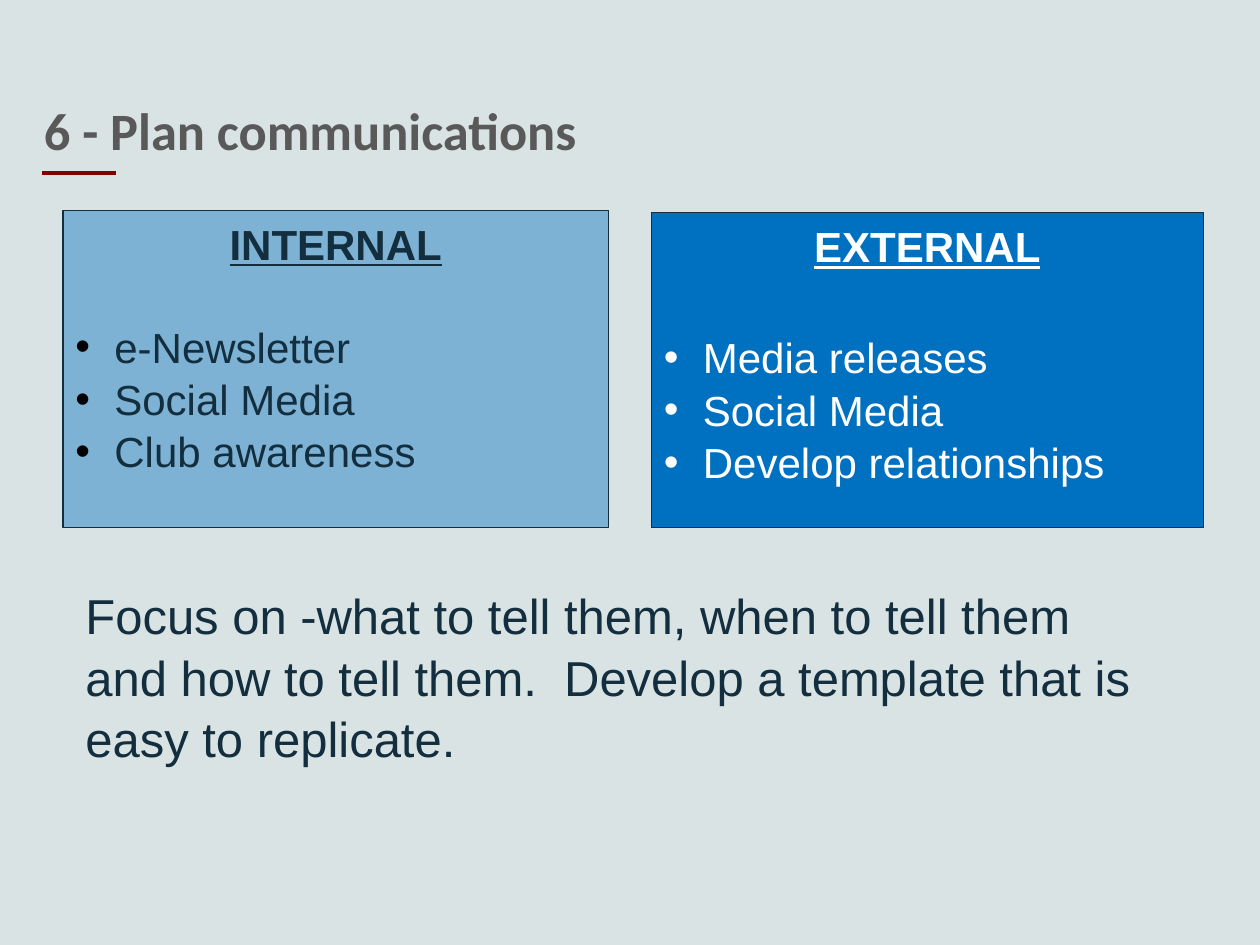
from dataclasses import dataclass

from lxml import etree
from pptx import Presentation, util as u
from pptx.dml.color import RGBColor
from pptx.enum import shapes, text
from pptx.oxml.ns import qn

WIDTH, HEIGHT = u.Inches(10), u.Inches(7.5)
COLOURS = {
    "background": "DAE3E3",
    "title": "595959",
    "accent": "800000",
    "ink": "132E3E",
    "panel": "0070C0",
    "white": "FFFFFF",
    "black": "000000",
}
LINE_SPACING = 1.04


@dataclass(frozen=True)
class Area:
    """A rectangle in shares of the slide's width and height."""
    left: float
    top: float
    width: float
    height: float

    def lengths(self) -> tuple[int, int, int, int]:
        return (int(self.left * WIDTH), int(self.top * HEIGHT),
                int(self.width * WIDTH), int(self.height * HEIGHT))


@dataclass(frozen=True)
class Style:
    size: float
    colour: str
    font: str = "Arial"
    bold: bool = False
    underline: bool = False


@dataclass(frozen=True)
class Panel:
    area: Area
    heading: str
    items: tuple[str, ...]
    ink: str
    bullet: str
    opacity: int
    heading_gap: float


PANELS = (
    Panel(Area(0.05, 0.2225, 0.433, 0.336), "INTERNAL",
          ("e-Newsletter", "Social Media", "Club awareness"),
          "ink", "black", 42, 28.7),
    Panel(Area(0.517, 0.225, 0.438, 0.3335), "EXTERNAL",
          ("Media releases", "Social Media", "Develop relationships"),
          "white", "white", 100, 33.5),
)


def colour(name: str) -> RGBColor:
    return RGBColor.from_string(COLOURS[name])


def add_run(paragraph, words: str, style: Style) -> None:
    run = paragraph.add_run()
    run.text = words
    run.font.name = style.font
    run.font.size = u.Pt(style.size)
    run.font.bold = style.bold
    run.font.underline = style.underline
    run.font.color.rgb = colour(style.colour)


def add_bullet(paragraph, bullet_colour: str) -> None:
    properties = paragraph._p.get_or_add_pPr()
    properties.set("marL", str(u.Inches(0.31)))
    properties.set("indent", str(-u.Inches(0.31)))
    holder = etree.SubElement(properties, qn("a:buClr"))
    etree.SubElement(holder, qn("a:srgbClr"), val=COLOURS[bullet_colour])
    etree.SubElement(properties, qn("a:buFont"), typeface="Arial")
    etree.SubElement(properties, qn("a:buChar"), char="•")


def add_text(slide, area: Area, words: str, style: Style,
             anchor=text.MSO_ANCHOR.TOP, spacing: float = LINE_SPACING) -> None:
    frame = slide.shapes.add_textbox(*area.lengths()).text_frame
    frame.word_wrap = True
    frame.vertical_anchor = anchor
    frame.paragraphs[0].line_spacing = spacing
    add_run(frame.paragraphs[0], words, style)


def add_panel(slide, panel: Panel) -> None:
    shape = slide.shapes.add_shape(shapes.MSO_SHAPE.RECTANGLE, *panel.area.lengths())
    shape.shadow.inherit = False
    shape.fill.solid()
    shape.fill.fore_color.rgb = colour("panel")
    if panel.opacity < 100:
        fill = shape._element.spPr.find(qn("a:solidFill"))
        etree.SubElement(fill[0], qn("a:alpha"), val=str(panel.opacity * 1000))
    shape.line.color.rgb = colour("ink")
    shape.line.width = u.Pt(0.75)

    frame = shape.text_frame
    frame.word_wrap = True
    frame.vertical_anchor = text.MSO_ANCHOR.TOP
    heading = frame.paragraphs[0]
    heading.alignment = text.PP_ALIGN.CENTER
    heading.line_spacing = LINE_SPACING
    heading.space_after = u.Pt(panel.heading_gap)
    add_run(heading, panel.heading, Style(24, panel.ink, bold=True, underline=True))
    for item in panel.items:
        paragraph = frame.add_paragraph()
        paragraph.alignment = text.PP_ALIGN.LEFT
        paragraph.line_spacing = LINE_SPACING
        add_bullet(paragraph, panel.bullet)
        add_run(paragraph, item, Style(24, panel.ink))


def add_title_rule(slide) -> None:
    y = int(0.183 * HEIGHT)
    rule = slide.shapes.add_connector(shapes.MSO_CONNECTOR.STRAIGHT,
                                      int(0.033 * WIDTH), y, int(0.092 * WIDTH), y)
    rule.line.color.rgb = colour("accent")
    rule.line.width = u.Pt(2.25)
    etree.SubElement(rule._element.spPr, qn("a:effectLst"))


def main() -> None:
    presentation = Presentation()
    presentation.slide_width, presentation.slide_height = WIDTH, HEIGHT
    slide = presentation.slides.add_slide(presentation.slide_layouts[6])
    slide.background.fill.solid()
    slide.background.fill.fore_color.rgb = colour("background")

    add_title_rule(slide)
    add_text(slide, Area(0.025, 0.09, 0.942, 0.094), "6 - Plan communications",
             Style(30, "title", "Calibri", bold=True), text.MSO_ANCHOR.MIDDLE, 1.0)
    for panel in PANELS:
        add_panel(slide, panel)
    add_text(slide, Area(0.058, 0.611, 0.875, 0.2),
             "Focus on -what to tell them, when to tell them and how to tell them.  "
             "Develop a template that is easy to replicate.", Style(28, "ink"))
    presentation.save("out.pptx")


if __name__ == "__main__":
    main()
